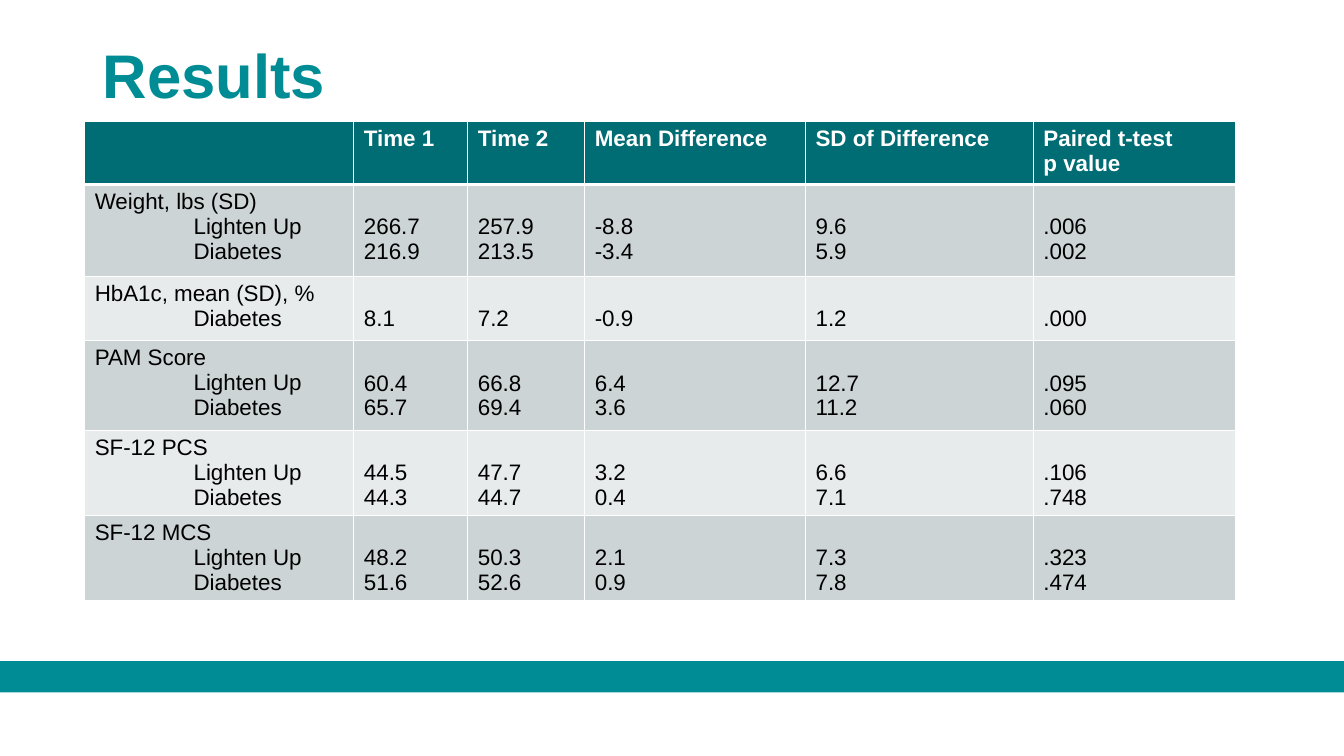
from dataclasses import dataclass

from lxml.etree import SubElement
from pptx import Presentation
from pptx.dml.color import RGBColor as RGB
from pptx.enum.shapes import MSO_SHAPE as Shape
from pptx.enum.text import MSO_ANCHOR as Anchor, MSO_AUTO_SIZE as AutoSize, PP_ALIGN as Align
from pptx.oxml.ns import qn
from pptx.util import Inches, Pt

TITLE = "Results"
HEADINGS = ["", "Time 1", "Time 2", "Mean Difference", "SD of Difference", "Paired t-test\np value"]
LIGHTEN, DIABETES = "Lighten Up", "Diabetes"
# Each measure: name, then one row of values per programme
MEASURES = [
    ("Weight, lbs (SD)", {LIGHTEN: ["266.7", "257.9", "-8.8", "9.6", ".006"],
                          DIABETES: ["216.9", "213.5", "-3.4", "5.9", ".002"]}),
    ("HbA1c, mean (SD), %", {DIABETES: ["8.1", "7.2", "-0.9", "1.2", ".000"]}),
    ("PAM Score", {LIGHTEN: ["60.4", "66.8", "6.4", "12.7", ".095"],
                   DIABETES: ["65.7", "69.4", "3.6", "11.2", ".060"]}),
    ("SF-12 PCS", {LIGHTEN: ["44.5", "47.7", "3.2", "6.6", ".106"],
                   DIABETES: ["44.3", "44.7", "0.4", "7.1", ".748"]}),
    ("SF-12 MCS", {LIGHTEN: ["48.2", "50.3", "2.1", "7.3", ".323"],
                   DIABETES: ["51.6", "52.6", "0.9", "7.8", ".474"]}),
]
COLUMN_WIDTHS = [2.67, 1.13, 1.16, 2.19, 2.26, 2.01]
ROW_HEIGHTS = [0.63, 0.91, 0.64, 0.89, 0.84, 0.84]
PROGRAMME_INDENT = 0.98
VALUES_TOP = 0.3  # top margin that sets values level with the programmes


@dataclass(frozen=True)
class Theme:
    font: str = "Arial"
    title_size: int = 44
    table_size: int = 16
    title: str = "008C94"
    band: str = "008C95"
    header: str = "006C74"
    stripes: tuple = ("CCD4D6", "E7EBEB")
    white: str = "FFFFFF"
    black: str = "000000"


THEME = Theme()


def add_run(paragraph, text, size, color, bold=False):
    run = paragraph.add_run()
    run.text = text
    font = run.font
    font.name, font.size, font.bold = THEME.font, Pt(size), bold
    font.color.rgb = RGB.from_string(color)


def style_cell(cell, fill, bottom_width=1):
    """Draw white borders, then the fill, as the schema order requires."""
    properties = cell._tc.get_or_add_tcPr()
    for side, width in {"L": 1, "R": 1, "T": 1, "B": bottom_width}.items():
        border = SubElement(properties, qn(f"a:ln{side}"), w=str(Pt(width)))
        border_fill = SubElement(border, qn("a:solidFill"))
        SubElement(border_fill, qn("a:srgbClr"), val=THEME.white)
    cell.fill.solid()
    cell.fill.fore_color.rgb = RGB.from_string(fill)


def write_lines(cell, lines, color=THEME.black, bold=False, indent=0):
    """Write one paragraph per line, indenting all after the first."""
    frame = cell.text_frame
    for index, line in enumerate(lines):
        paragraph = frame.add_paragraph() if index else frame.paragraphs[0]
        if index and indent:
            paragraph._p.get_or_add_pPr().set("marL", str(Inches(indent)))
        add_run(paragraph, line, THEME.table_size, color, bold)


def add_title(slide):
    title = slide.shapes.title
    title.left, title.top = Inches(0.92), Inches(0.4)
    title.width, title.height = Inches(11.5), Inches(1.45)
    frame = title.text_frame
    frame.auto_size = AutoSize.NONE
    frame.vertical_anchor = Anchor.TOP
    heading = frame.paragraphs[0]
    heading.alignment, heading.line_spacing = Align.LEFT, 0.9
    add_run(heading, TITLE, THEME.title_size, THEME.title, bold=True)


def add_band(slide, width):
    band = slide.shapes.add_shape(Shape.RECTANGLE, 0, Inches(6.56), width, Inches(0.31))
    band.shadow.inherit = False
    band.fill.solid()
    band.fill.fore_color.rgb = RGB.from_string(THEME.band)
    band.line.fill.background()


def add_results(slide):
    results = slide.shapes.add_table(
        len(ROW_HEIGHTS), len(COLUMN_WIDTHS), Inches(0.84), Inches(1.2),
        Inches(sum(COLUMN_WIDTHS)), Inches(sum(ROW_HEIGHTS))).table
    for column, width in zip(results.columns, COLUMN_WIDTHS):
        column.width = Inches(width)
    for row, height in zip(results.rows, ROW_HEIGHTS):
        row.height = Inches(height)

    for cell, heading in zip(results.rows[0].cells, HEADINGS):
        style_cell(cell, THEME.header, bottom_width=3)
        if heading:
            write_lines(cell, heading.split("\n"), THEME.white, bold=True)

    for index, (measure, programmes) in enumerate(MEASURES):
        label, *value_cells = results.rows[index + 1].cells
        for cell in (label, *value_cells):
            style_cell(cell, THEME.stripes[index % 2])
        write_lines(label, [measure, *programmes], indent=PROGRAMME_INDENT)
        for cell, values in zip(value_cells, zip(*programmes.values())):
            cell.margin_top = Inches(VALUES_TOP)
            write_lines(cell, values)


def main():
    deck = Presentation()
    deck.slide_width, deck.slide_height = Inches(13.33), Inches(7.5)
    slide = deck.slides.add_slide(deck.slide_layouts[5])
    add_band(slide, deck.slide_width)
    add_title(slide)
    add_results(slide)
    deck.save("out.pptx")


if __name__ == "__main__":
    main()
